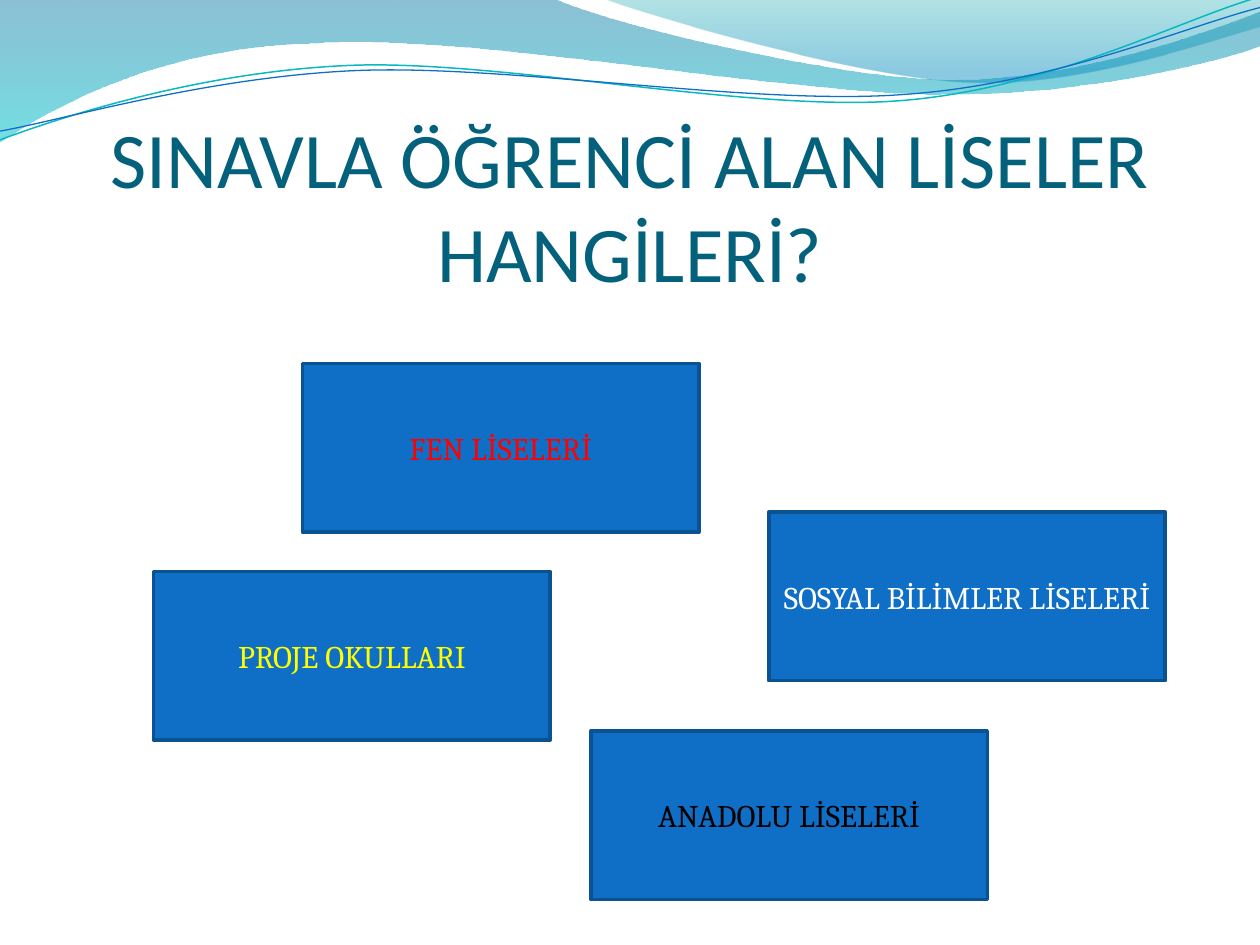
"""Build a slide naming the high schools that admit students by exam."""
from dataclasses import dataclass
from math import cos, radians, sin
from typing import Optional

from lxml import etree
from pptx import Presentation
from pptx.dml.color import RGBColor
from pptx.enum import shapes, text
from pptx.oxml.ns import qn
from pptx.util import Pt

WHITE = RGBColor(0xFF, 0xFF, 0xFF)
BLACK = RGBColor(0x00, 0x00, 0x00)
RED = RGBColor(0xFF, 0x00, 0x00)
YELLOW = RGBColor(0xFF, 0xFF, 0x00)
BLUE = RGBColor(0x0F, 0x6F, 0xC6)
DARK_BLUE = RGBColor(0x0B, 0x52, 0x92)
TITLE_TEAL = RGBColor(0x04, 0x61, 0x7B)
LINE_TEAL = RGBColor(0x0A, 0xB8, 0xBF)

BOX_W, BOX_H = 226.6, 96.4
LINE_TILT = -2.7
LINE_PIVOT = (359.4, 42)


@dataclass
class Stop:
    position: float
    color: RGBColor
    opacity: int


@dataclass
class Wave:
    start: tuple
    segments: list
    stops: tuple = ()
    line: Optional[RGBColor] = None
    width: float = 0
    tilt: float = 0


@dataclass
class SchoolBox:
    label: str
    left: float
    top: float
    color: RGBColor


WAVES = [
    Wave((0, 0), [
        [(316.8, -0.7)],
        [(342.7, 12.2), (478.1, 45.4), (545.8, 45.4)],
        [(614.2, 45.4), (689.8, 18.7), (720, 6.5)],
        [(720.7, 25.9)],
        [(707.8, 31.7), (626.4, 54.7), (537.1, 54)],
        [(447.8, 54), (275, 20.2), (185, 24.5)],
        [(92.9, 25.9), (33.1, 59.8), (-0.7, 81.4)],
    ], stops=(Stop(0, RGBColor(0x00, 0x74, 0xA1), 45),
              Stop(1, RGBColor(0x00, 0xC6, 0xCF), 55))),
    Wave((344.9, -0.7), [
        [(366.5, 7.9), (491, 44.6), (553.7, 46.8)],
        [(616.3, 49.7), (691.9, 23), (720, 15.1)],
        [(720, 0)],
    ], stops=(Stop(0, RGBColor(0x00, 0xA1, 0xA9), 30),
              Stop(0.8, RGBColor(0x00, 0x8B, 0xBF), 45))),
    Wave((0, 79.9), [
        [(34.6, 67), (113.8, 41), (199.4, 37.4)],
        [(284.4, 33.8), (427, 64.1), (513.4, 57.6)],
        [(599.8, 51.1), (675.4, 10.8), (718.6, -1.4)],
    ], line=LINE_TEAL, width=0.85, tilt=LINE_TILT),
    Wave((0, 74.9), [
        [(33.8, 69.1), (118.1, 43.9), (203.8, 40.3)],
        [(290.2, 36.7), (429.8, 60.5), (516.2, 54)],
        [(601.9, 48.2), (677.5, 15.1), (720, 4.3)],
    ], line=BLUE, width=0.75, tilt=LINE_TILT),
]

BOXES = [
    SchoolBox("PROJE OKULLARI", 87.8, 326.6, YELLOW),
    SchoolBox("ANADOLU LİSELERİ", 337.6, 417.6, BLACK),
    SchoolBox("SOSYAL BİLİMLER LİSELERİ", 439.3, 292.6, WHITE),
    SchoolBox("FEN LİSELERİ", 172.8, 207.7, RED),
]


def untilt(point: tuple, tilt: float) -> tuple:
    angle = radians(-tilt)
    dx, dy = point[0] - LINE_PIVOT[0], point[1] - LINE_PIVOT[1]
    return (Pt(LINE_PIVOT[0] + dx * cos(angle) - dy * sin(angle)),
            Pt(LINE_PIVOT[1] + dx * sin(angle) + dy * cos(angle)))


def bend(sp, segments: list) -> None:
    nodes = iter(list(sp.element.iter(qn("a:lnTo"))))
    for seg in segments:
        group = [next(nodes) for _ in seg]
        if len(group) == 1:
            continue
        curve = etree.Element(qn("a:cubicBezTo"))
        group[0].addprevious(curve)
        for node in group:
            curve.append(node[0])
            node.getparent().remove(node)


def draw_wave(s, wave: Wave) -> None:
    builder = s.shapes.build_freeform(*untilt(wave.start, wave.tilt))
    points = [untilt(pt, wave.tilt) for seg in wave.segments for pt in seg]
    builder.add_line_segments(points, close=bool(wave.stops))
    sp = builder.convert_to_shape()
    bend(sp, wave.segments)
    sp.rotation = wave.tilt
    sp.shadow.inherit = False
    if wave.line is not None:
        sp.fill.background()
        sp.line.color.rgb = wave.line
        sp.line.width = Pt(wave.width)
        return
    sp.line.fill.background()
    sp.fill.gradient()
    sp.fill.gradient_angle = 270
    for gs, stop in zip(sp.fill.gradient_stops, wave.stops):
        gs.position = stop.position
        gs.color.rgb = stop.color
    colors = sp.element.spPr.find(qn("a:gradFill")).iter(qn("a:srgbClr"))
    for color, stop in zip(list(colors), wave.stops):
        etree.SubElement(color, qn("a:alpha"), val=str(stop.opacity * 1000))


def style_text(tf, content: str, font: str, size: float, color: RGBColor) -> None:
    tf.word_wrap = True
    tf.text = content
    p = tf.paragraphs[0]
    p.alignment = text.PP_ALIGN.CENTER
    p.font.name = font
    p.font.size = Pt(size)
    p.font.color.rgb = color


def draw_box(s, box: SchoolBox) -> None:
    sp = s.shapes.add_shape(shapes.MSO_SHAPE.RECTANGLE, Pt(box.left), Pt(box.top),
                            Pt(BOX_W), Pt(BOX_H))
    sp.shadow.inherit = False
    sp.fill.solid()
    sp.fill.fore_color.rgb = BLUE
    sp.line.color.rgb = DARK_BLUE
    sp.line.width = Pt(2)
    sp.text_frame.vertical_anchor = text.MSO_ANCHOR.MIDDLE
    style_text(sp.text_frame, box.label, "Cambria", 18, box.color)


def set_title(s, content: str) -> None:
    sp = s.shapes.title
    sp.left, sp.top, sp.width, sp.height = Pt(36), Pt(55.4), Pt(648), Pt(169.2)
    tf = sp.text_frame
    tf.auto_size = text.MSO_AUTO_SIZE.NONE
    tf.vertical_anchor = text.MSO_ANCHOR.BOTTOM
    tf.margin_left = tf.margin_right = 0
    tf.margin_top, tf.margin_bottom = Pt(3.6), Pt(53.9)
    style_text(tf, content, "Calibri", 45, TITLE_TEAL)


def main() -> None:
    prs = Presentation()
    prs.slide_width, prs.slide_height = Pt(720), Pt(540)
    s = prs.slides.add_slide(prs.slide_layouts[5])
    set_title(s, "SINAVLA ÖĞRENCİ ALAN LİSELER HANGİLERİ?")
    for wave in WAVES:
        draw_wave(s, wave)
    for box in BOXES:
        draw_box(s, box)
    prs.save("out.pptx")


if __name__ == "__main__":
    main()
